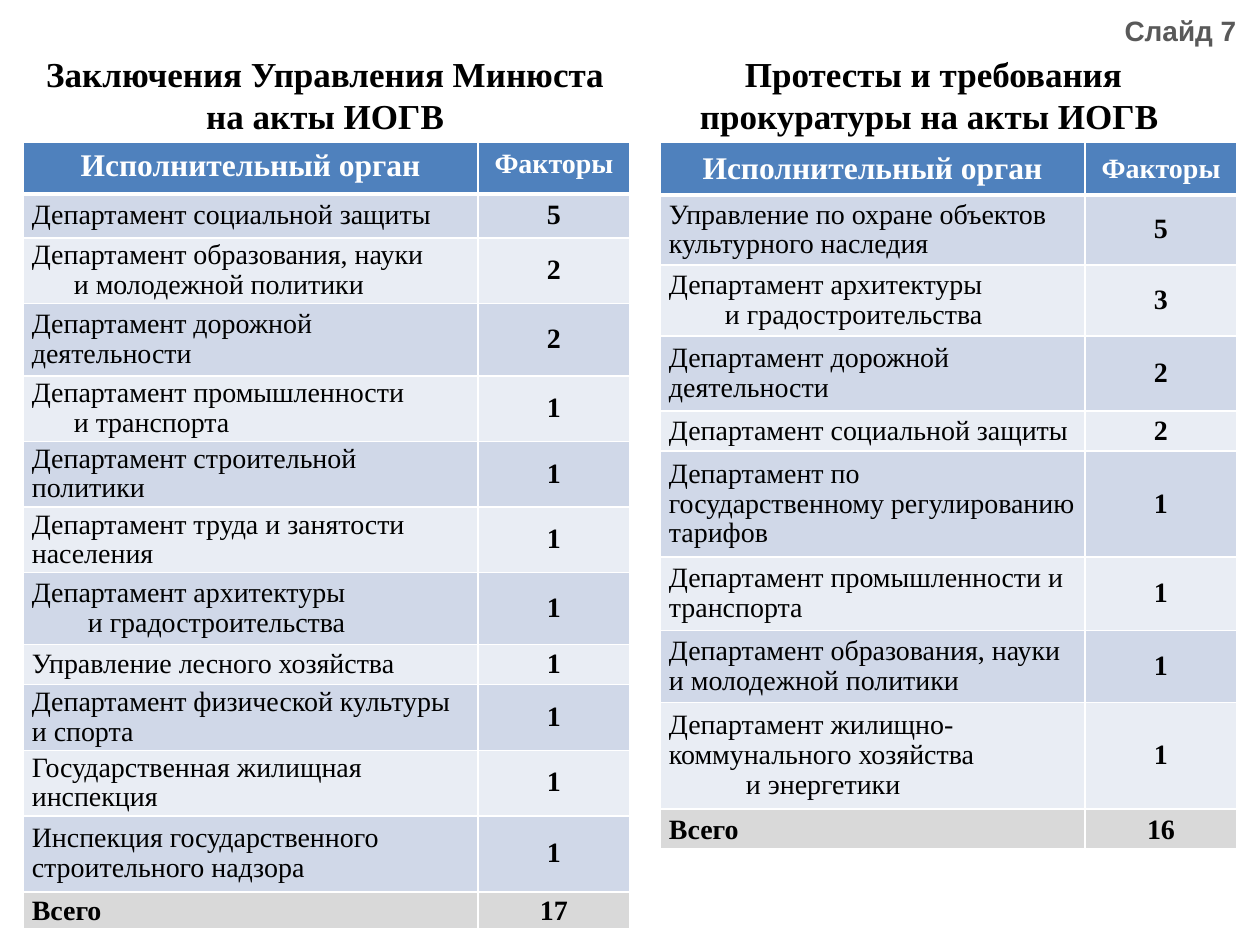
from lxml.etree import SubElement
from pptx import Presentation
from pptx.dml.color import RGBColor
from pptx.enum.text import MSO_ANCHOR, MSO_AUTO_SIZE, PP_ALIGN
from pptx.oxml.ns import qn
from pptx.util import Pt

SERIF = "Times New Roman"
HEADER = ("Исполнительный орган", "Факторы")
CONCLUSIONS = [
    ("Департамент социальной защиты", 5, 25),
    ("Департамент образования, науки\nи молодежной политики", 2, 37.5, 24),
    ("Департамент дорожной деятельности", 2, 41.5),
    ("Департамент промышленности\nи транспорта", 1, 37.5, 24),
    ("Департамент строительной политики", 1, 37.5),
    ("Департамент труда и занятости населения", 1, 37.5),
    ("Департамент архитектуры\nи градостроительства", 1, 41, 32),
    ("Управление лесного хозяйства", 1, 23),
    ("Департамент физической культуры и спорта", 1, 37.5),
    ("Государственная жилищная инспекция", 1, 37.5),
    ("Инспекция государственного строительного надзора", 1, 43.5),
    ("Всего", 17, 21),
]
PROTESTS = [
    ("Управление по охране объектов культурного наследия", 5, 40),
    ("Департамент архитектуры\nи градостроительства", 3, 40.5, 32),
    ("Департамент дорожной деятельности", 2, 43),
    ("Департамент социальной защиты", 2, 23),
    ("Департамент по государственному регулированию тарифов", 1, 60.5),
    ("Департамент промышленности и транспорта", 1, 42),
    ("Департамент образования, науки и молодежной политики", 1, 41),
    ("Департамент жилищно-коммунального хозяйства\nи энергетики", 1, 61, 44),
    ("Всего", 16, 23),
]


def color(value):
    """Turn a hex string into a colour."""
    return RGBColor.from_string(value)


class SlideBuilder:
    """Holds the table style and the current slide."""

    header_fill = "4F81BD"
    band_fills = ("D0D8E8", "E9EDF4")
    total_fill = "D9D9D9"
    border = "FFFFFF"

    def __init__(self, slide):
        """Keep the slide to build on."""
        self.slide = slide

    def set_text(self, frame, text, size, align, ink="000000", bold=True, font=SERIF):
        """Fill a text frame and format its runs."""
        frame.text = text
        for para in frame.paragraphs:
            para.alignment = align
            for span in para.runs:
                span.font.size = Pt(size)
                span.font.name = font
                span.font.bold = bold
                span.font.color.rgb = color(ink)

    def heading(self, index, text, left, width):
        """Place a body placeholder above a table."""
        box = self.slide.placeholders[index]
        box.left, box.top, box.width, box.height = Pt(left), Pt(31), Pt(width), Pt(50.4)
        frame = box.text_frame
        frame.auto_size = MSO_AUTO_SIZE.NONE
        frame.vertical_anchor = MSO_ANCHOR.BOTTOM
        self.set_text(frame, text, 20, PP_ALIGN.CENTER)

    def label(self, text, left, top, width, height):
        """Add the slide number label."""
        frame = self.slide.shapes.add_textbox(Pt(left), Pt(top), Pt(width), Pt(height)).text_frame
        frame.word_wrap = True
        self.set_text(frame, text, 16, PP_ALIGN.RIGHT, "595959", font="Arial")

    def paint(self, cell, fill, top=1, bottom=1):
        """Set the fill and the borders of a cell."""
        cell.fill.solid()
        cell.fill.fore_color.rgb = color(fill)
        properties = cell._tc.get_or_add_tcPr()
        sides = (("a:lnL", 1), ("a:lnR", 1), ("a:lnT", top), ("a:lnB", bottom))
        for position, (side, weight) in enumerate(sides):
            line = SubElement(properties, qn(side), w=str(Pt(weight)))
            SubElement(SubElement(line, qn("a:solidFill")), qn("a:srgbClr"), val=self.border)
            properties.insert(position, line)

    def body_cell(self, cell, text, align, bold, spacing, indent=0):
        """Fill a body cell, indenting any line after a break."""
        cell.margin_left = cell.margin_right = Pt(5)
        cell.margin_top = cell.margin_bottom = 0
        cell.vertical_anchor = MSO_ANCHOR.MIDDLE
        self.set_text(cell.text_frame, text, 16, align, bold=bold)
        for para in cell.text_frame.paragraphs:
            para.line_spacing = spacing
        for para in cell.text_frame.paragraphs[1:]:
            para._p.get_or_add_pPr().set("marL", str(Pt(indent)))

    def table(self, rows, left, widths, header_height, header_anchor):
        """Add a table of bodies and factors with a total row."""
        heights = [header_height] + [row[2] for row in rows]
        grid = self.slide.shapes.add_table(
            len(heights), len(widths), Pt(left), Pt(81.4), Pt(sum(widths)), Pt(sum(heights))
        ).table
        for column, width in zip(grid.columns, widths):
            column.width = Pt(width)
        for line, height in zip(grid.rows, heights):
            line.height = Pt(height)
        for column, (text, size) in enumerate(zip(HEADER, (18, 16))):
            cell = grid.cell(0, column)
            cell.vertical_anchor = header_anchor
            self.set_text(cell.text_frame, text, size, PP_ALIGN.CENTER, "FFFFFF")
            self.paint(cell, self.header_fill, bottom=3)
        for number, (name, factors, _, *indent) in enumerate(rows, 1):
            total = number == len(rows)
            fill = self.total_fill if total else self.band_fills[(number - 1) % 2]
            spacing = 1.07 if total else 0.95
            name_cell, factor_cell = grid.cell(number, 0), grid.cell(number, 1)
            self.body_cell(name_cell, name, PP_ALIGN.LEFT, total, spacing, *indent)
            self.body_cell(factor_cell, str(factors), PP_ALIGN.CENTER, True, spacing)
            for cell in (name_cell, factor_cell):
                self.paint(cell, fill, top=3 if number == 1 else 1)

    def remove_empty_placeholders(self):
        """Drop the placeholders that hold no text."""
        for box in list(self.slide.placeholders):
            if not box.text_frame.text:
                box._element.getparent().remove(box._element)


def main():
    """Build and save the deck."""
    deck = Presentation()
    deck.slide_width, deck.slide_height = Pt(720), Pt(540)
    page = SlideBuilder(deck.slides.add_slide(deck.slide_layouts.get_by_name("Comparison")))
    page.heading(1, "Заключения Управления Минюста на акты ИОГВ", 13, 345.6)
    page.heading(3, "Протесты и требования прокуратуры на акты ИОГВ ", 360, 347)
    page.remove_empty_placeholders()
    page.table(CONCLUSIONS, 13.2, (260, 86.6), 29.5, MSO_ANCHOR.TOP)
    page.table(PROTESTS, 377.3, (242.6, 87.1), 30, MSO_ANCHOR.MIDDLE)
    page.label("Слайд 7", 618.5, 4.3, 95, 26.6)
    deck.save("out.pptx")


if __name__ == "__main__":
    main()
